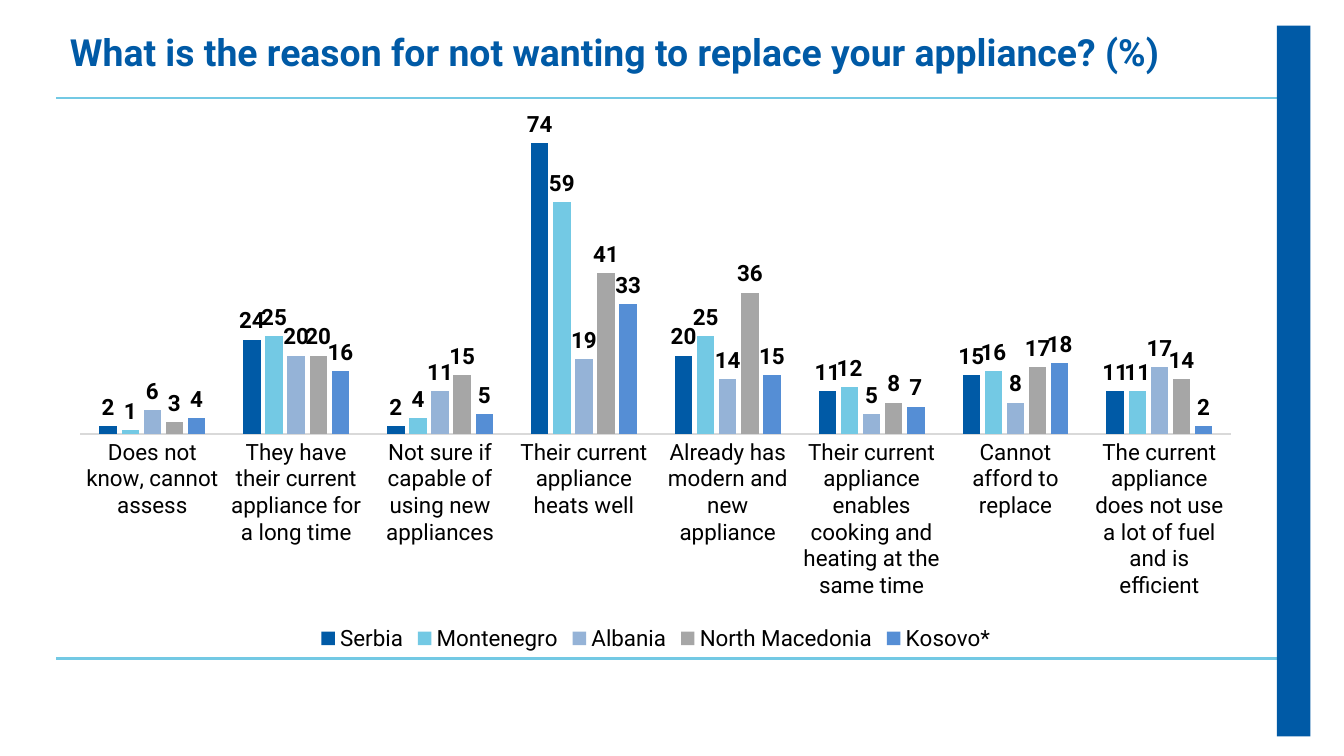
from lxml import etree
from pptx import Presentation
from pptx.chart.data import CategoryChartData
from pptx.dml.color import RGBColor
from pptx.enum.chart import (XL_CHART_TYPE as ChartType, XL_LABEL_POSITION as LabelPos,
                             XL_LEGEND_POSITION as LegendPos, XL_TICK_MARK as TickMark)
from pptx.enum.shapes import MSO_CONNECTOR as Connector, MSO_SHAPE as Shape
from pptx.enum.text import MSO_ANCHOR as Anchor, PP_ALIGN as Align
from pptx.oxml.ns import qn
from pptx.util import Inches, Pt

FONT = "Roboto"
BLUE = RGBColor(0x00, 0x5A, 0xA6)
SKY = RGBColor(0x73, 0xC9, 0xE4)
PALE_BLUE = RGBColor(0x95, 0xB3, 0xD7)
GRAY = RGBColor(0xA6, 0xA6, 0xA6)
MID_BLUE = RGBColor(0x55, 0x8E, 0xD5)
AXIS_GRAY = RGBColor(0xD9, 0xD9, 0xD9)
BLACK = RGBColor(0x00, 0x00, 0x00)

# Content
QUESTION = "What is the reason for not wanting to replace your appliance? (%)"
REASONS = [
    "Does not know, cannot assess",
    "They have their current appliance for a long time",
    "Not sure if capable of using new appliances",
    "Their current appliance heats well",
    "Already has modern and new appliance",
    "Their current appliance enables cooking and heating at the same time",
    "Cannot afford to replace",
    "The current appliance does not use a lot of fuel and is efficient",
]
COUNTRIES = [
    ("Serbia", BLUE, (2, 24, 2, 74, 20, 11, 15, 11)),
    ("Montenegro", SKY, (1, 25, 4, 59, 25, 12, 16, 11)),
    ("Albania", PALE_BLUE, (6, 20, 11, 19, 14, 5, 8, 17)),
    ("North Macedonia", GRAY, (3, 20, 15, 41, 36, 8, 17, 14)),
    ("Kosovo*", MID_BLUE, (4, 16, 5, 33, 15, 7, 18, 2)),
]
LEFT = Inches(0.42)
RULE_HEIGHTS = (0.73, 4.9)


def set_font(font, size, color, bold):
    font.name = FONT
    font.size = Pt(size)
    font.bold = bold
    font.color.rgb = color


# Widescreen slide, 16:9
deck = Presentation()
deck.slide_width = Inches(10)
deck.slide_height = Inches(10) * 9 // 16
slide = deck.slides.add_slide(deck.slide_layouts[5])

# Rules above and below the chart
for height in RULE_HEIGHTS:
    rule = slide.shapes.add_connector(Connector.STRAIGHT, Inches(9.71), Inches(height),
                                      LEFT, Inches(height))
    rule.line.color.rgb = SKY
    rule.line.width = Pt(1.5)
    etree.SubElement(rule._element.spPr, qn("a:effectLst"))

# Side band
band = slide.shapes.add_shape(Shape.RECTANGLE, Inches(9.5), Inches(0.19),
                              Inches(0.25), Inches(5.29))
band.shadow.inherit = False
band.fill.solid()
band.fill.fore_color.rgb = BLUE
band.line.fill.background()

# Title
title = slide.shapes.title
title.left, title.top = LEFT, Inches(0.23)
title.width, title.height = Inches(8.83), Inches(0.37)
title.text_frame.text = QUESTION
title.text_frame.vertical_anchor = Anchor.MIDDLE
heading = title.text_frame.paragraphs[0]
heading.alignment = Align.LEFT
heading.line_spacing = 0.8
set_font(heading.font, 20, BLUE, True)

# Chart of reasons by country
answers = CategoryChartData(number_format="0")
answers.categories = REASONS
for country, _, shares in COUNTRIES:
    answers.add_series(country, shares)
chart = slide.shapes.add_chart(ChartType.COLUMN_CLUSTERED, LEFT, Inches(0.81),
                               Inches(8.92), Inches(4.08), answers).chart
set_font(chart.font, 12, BLACK, True)
chart.has_title = False

chart.has_legend = True
chart.legend.position = LegendPos.BOTTOM
chart.legend.include_in_layout = False
set_font(chart.legend.font, 12, BLACK, False)

reason_axis = chart.category_axis
reason_axis.major_tick_mark = TickMark.NONE
reason_axis.format.line.color.rgb = AXIS_GRAY
reason_axis.format.line.width = Pt(0.75)
set_font(reason_axis.tick_labels.font, 12, BLACK, False)

share_axis = chart.value_axis
share_axis.visible = False
share_axis.has_major_gridlines = False
share_axis.minimum_scale, share_axis.maximum_scale = 0, 80

columns = chart.plots[0]
columns.gap_width, columns.overlap = 219, -27
columns.vary_by_categories = False
for bars, (_, color, _) in zip(columns.series, COUNTRIES):
    bars.format.fill.solid()
    bars.format.fill.fore_color.rgb = color
    labels = bars.data_labels
    labels.show_value = True
    labels.position = LabelPos.OUTSIDE_END
    set_font(labels.font, 12, BLACK, True)

deck.save("out.pptx")
